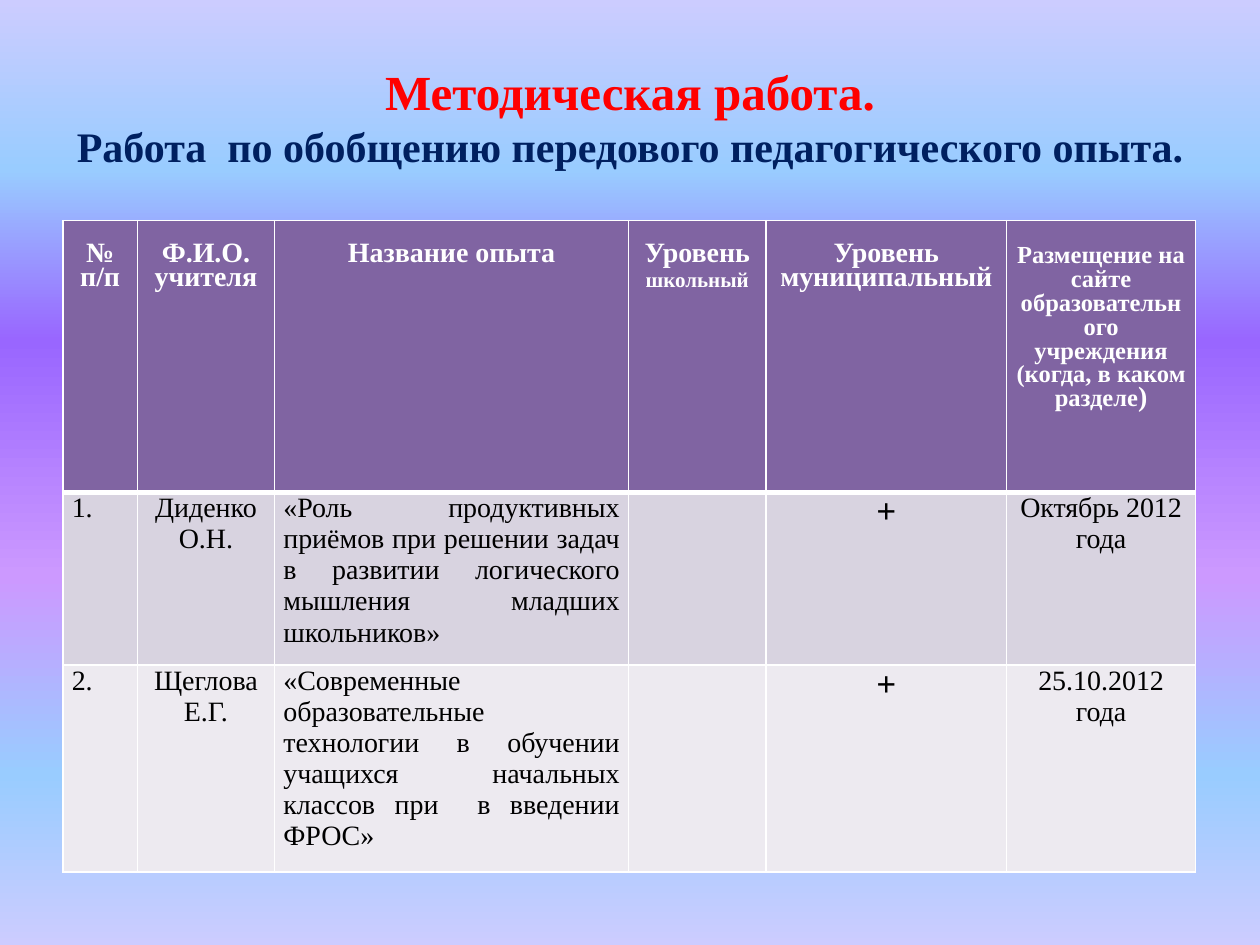
from pptx import Presentation
from pptx import util as u
from pptx.dml.color import RGBColor
from pptx.enum import text
from pptx.oxml import parse_xml
from pptx.oxml.ns import nsdecls, qn

FONT = "Times New Roman"
COLORS = {
    "title": "FF0000", "subtitle": "002060", "header": "8064A2",
    "odd_row": "D8D3E0", "even_row": "EDEAF0", "white": "FFFFFF", "black": "000000",
}
BACKGROUND_STOPS = [(0, "CCCCFF"), (18, "99CCFF"), (36, "9966FF"),
                    (61, "CC99FF"), (82, "99CCFF"), (100, "CCCCFF")]
COLUMN_WIDTHS = [0.59, 1.09, 2.81, 1.09, 1.91, 1.5]
ROW_HEIGHTS = [2.16, 1.37, 1.64]
HEADER_LINE = u.Pt(13.7)

# Each header is a list of (text, size) spans.
HEADERS = [
    [("№ п/п", 16)],
    [("Ф.И.О. учителя", 16)],
    [("Название опыта", 16)],
    [("Уровень ", 16), ("школьный", 12)],
    [("Уровень муниципальный", 16)],
    [("Размещение на сайте образовательного учреждения (когда, в каком разделе", 14),
     (")", 16)],
]
TEACHERS = [
    ["1.", "Диденко О.Н.",
     "«Роль продуктивных приёмов при решении задач в развитии логического "
     "мышления младших школьников»", "", "+", "Октябрь 2012 года"],
    ["2.", "Щеглова Е.Г.",
     "«Современные образовательные технологии в обучении учащихся начальных "
     "классов при  в введении ФРОС»", "", "+", "25.10.2012 года"],
]
JUSTIFIED_COLUMNS = (0, 2)


def color(name):
    return RGBColor.from_string(COLORS[name])


def paint_background(slide):
    fill = slide.background.fill
    fill.gradient()
    fill.gradient_angle = 270
    stops = slide.element.find(".//" + qn("a:gsLst"))
    for stop in list(stops):
        stops.remove(stop)
    for percent, value in BACKGROUND_STOPS:
        stops.append(parse_xml(
            f'<a:gs {nsdecls("a")} pos="{percent * 1000}"><a:srgbClr val="{value}"/></a:gs>'))


def add_span(para, words, size, color_name=None):
    span = para.add_run()
    span.text = words
    span.font.size = u.Pt(size)
    if color_name:
        span.font.color.rgb = color(color_name)


def fill_title(slide):
    title = slide.shapes.title
    title.left, title.top = u.Inches(0.5), u.Inches(0.3)
    title.width, title.height = u.Inches(9), u.Inches(1.25)
    title.text_frame.vertical_anchor = text.MSO_ANCHOR.MIDDLE
    para = title.text_frame.paragraphs[0]
    para.alignment = text.PP_ALIGN.CENTER
    para.font.name, para.font.bold = FONT, True
    add_span(para, "Методическая работа.", 28, "title")
    para.add_line_break()
    add_span(para, "Работа  по обобщению передового педагогического опыта. ", 24, "subtitle")


def set_borders(cell, bottom_width):
    """Draw white lines; in the XML they stand before the cell's fill."""
    properties = cell._tc.get_or_add_tcPr()
    widths = {"lnL": 1, "lnR": 1, "lnT": 1, "lnB": bottom_width}
    for index, (side, width) in enumerate(widths.items()):
        properties.insert(index, parse_xml(
            f'<a:{side} {nsdecls("a")} w="{u.Pt(width)}"><a:solidFill>'
            f'<a:srgbClr val="{COLORS["white"]}"/></a:solidFill></a:{side}>'))


def format_cell(cell, fill_name, font_name, alignment, bold):
    """Style the cell and return its paragraph."""
    cell.margin_left = cell.margin_right = u.Inches(0.07)
    cell.margin_top = cell.margin_bottom = 0
    cell.fill.solid()
    cell.fill.fore_color.rgb = color(fill_name)
    para = cell.text_frame.paragraphs[0]
    para.alignment = alignment
    para.font.name, para.font.bold = FONT, bold
    para.font.color.rgb = color(font_name)
    return para


def fill_header(table):
    for column, spans in enumerate(HEADERS):
        cell = table.cell(0, column)
        para = format_cell(cell, "header", "white", text.PP_ALIGN.CENTER, True)
        cell.margin_top = HEADER_LINE
        para.line_spacing = HEADER_LINE
        for words, size in spans:
            add_span(para, words, size, "white")
        set_borders(cell, 3)


def fill_teacher(table, row, values):
    fill_name = "odd_row" if row % 2 else "even_row"
    for column, words in enumerate(values):
        cell = table.cell(row, column)
        justified = column in JUSTIFIED_COLUMNS
        alignment = text.PP_ALIGN.JUSTIFY if justified else text.PP_ALIGN.CENTER
        is_mark = words == "+"
        para = format_cell(cell, fill_name, "black", alignment, is_mark)
        if words:
            add_span(para, words, 20 if is_mark else 16, "black")
        set_borders(cell, 1)


def add_experience_table(slide):
    frame = slide.shapes.add_table(
        len(ROW_HEIGHTS), len(COLUMN_WIDTHS), u.Inches(0.5), u.Inches(1.75),
        u.Inches(sum(COLUMN_WIDTHS)), u.Inches(sum(ROW_HEIGHTS)))
    table = frame.table
    for column, width in zip(table.columns, COLUMN_WIDTHS):
        column.width = u.Inches(width)
    for row, height in zip(table.rows, ROW_HEIGHTS):
        row.height = u.Inches(height)
    fill_header(table)
    for row, values in enumerate(TEACHERS, start=1):
        fill_teacher(table, row, values)


def main():
    deck = Presentation()
    deck.slide_width, deck.slide_height = u.Inches(10), u.Inches(7.5)
    slide = deck.slides.add_slide(deck.slide_layouts.get_by_name("Title Only"))
    paint_background(slide)
    fill_title(slide)
    add_experience_table(slide)
    deck.save("out.pptx")


if __name__ == "__main__":
    main()
